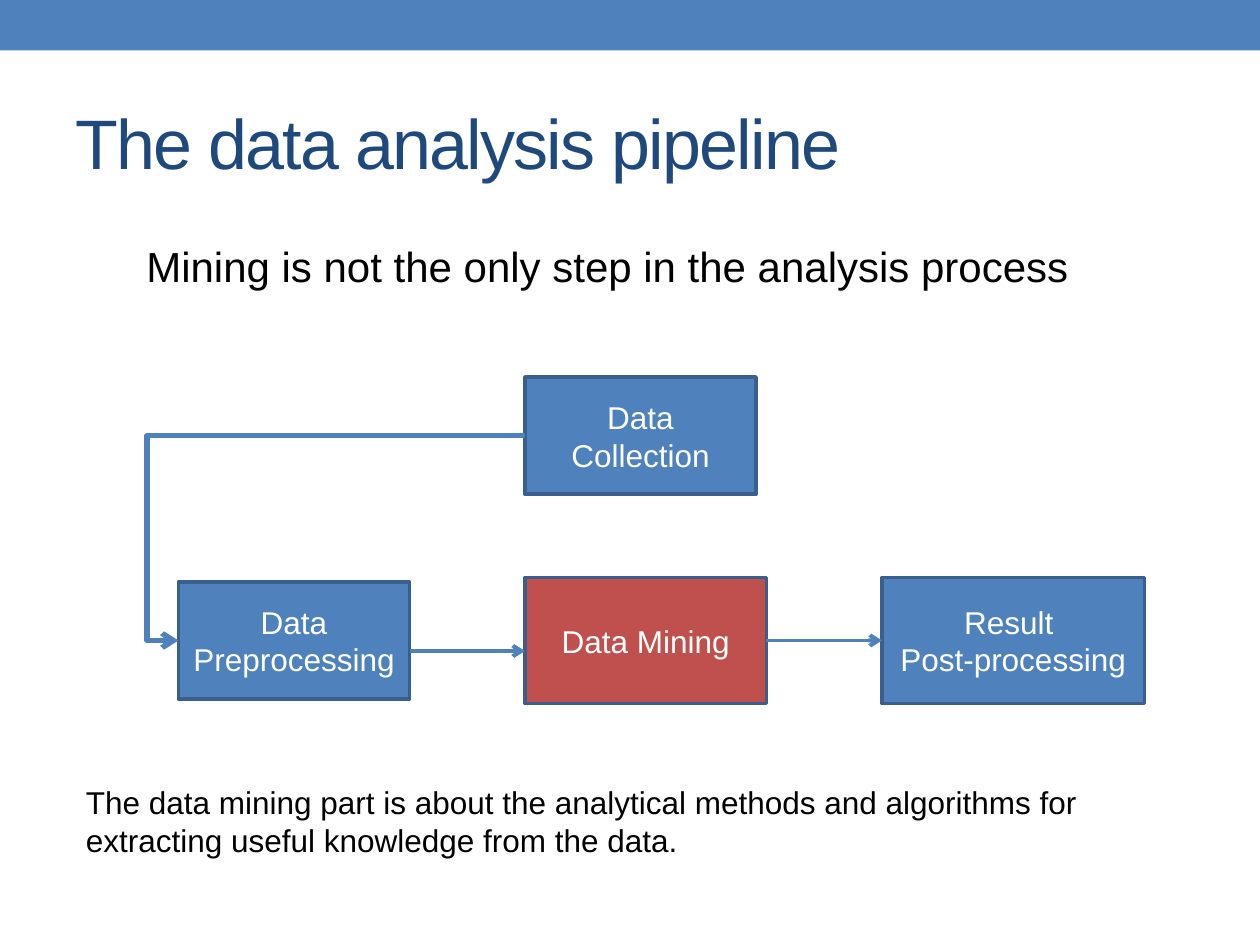
from dataclasses import dataclass

from lxml import etree
from pptx import Presentation
from pptx.dml.color import RGBColor
from pptx.enum.shapes import MSO_CONNECTOR, MSO_SHAPE
from pptx.enum.text import MSO_ANCHOR, PP_ALIGN
from pptx.oxml.ns import qn
from pptx.shapes.autoshape import Shape
from pptx.shapes.connector import Connector
from pptx.slide import Slide
from pptx.util import Pt

RECTANGLE = MSO_SHAPE.RECTANGLE
STRAIGHT = MSO_CONNECTOR.STRAIGHT
ELBOW = MSO_CONNECTOR.ELBOW
MIDDLE = MSO_ANCHOR.MIDDLE
TOP = MSO_ANCHOR.TOP
CENTER = PP_ALIGN.CENTER
LEFT = PP_ALIGN.LEFT

BLUE = RGBColor(0x4F, 0x81, 0xBD)
DARK_BLUE = RGBColor(0x3A, 0x5F, 0x8C)
NAVY = RGBColor(0x1F, 0x49, 0x7D)
RED = RGBColor(0xC0, 0x50, 0x4D)
WHITE = RGBColor(0xFF, 0xFF, 0xFF)
BLACK = RGBColor(0x00, 0x00, 0x00)
FONT = "Arial"
LEFT_SIDE, RIGHT_SIDE = 1, 3


@dataclass(frozen=True)
class Box:
    left: float
    top: float
    width: float
    height: float


@dataclass(frozen=True)
class Step:
    text: str
    box: Box
    fill: RGBColor = BLUE


@dataclass(frozen=True)
class Label:
    text: str
    box: Box
    size: float
    color: RGBColor = BLACK
    anchor: MSO_ANCHOR = TOP
    spacing: float = 0


COLLECTION = Step("Data Collection", Box(300, 215.5, 132, 67))
PREPROCESSING = Step("Data Preprocessing", Box(102, 332.5, 132, 67))
MINING = Step("Data Mining", Box(300, 330, 138, 72), RED)
POSTPROCESSING = Step("Result \nPost-processing", Box(504, 330, 150, 72))

LABELS = (
    Label("The data analysis pipeline", Box(36, 42, 648, 78), 40, NAVY, MIDDLE, -1),
    Label("Mining is not the only step in the analysis process",
          Box(76.5, 134, 572, 65), 24),
    Label("The data mining part is about the analytical methods and algorithms "
          "for extracting useful knowledge from the data.",
          Box(42, 444, 660, 51), 18),
)


def set_text(shape: Shape, text: str, size: float, color: RGBColor,
             alignment: PP_ALIGN, anchor: MSO_ANCHOR, spacing: float = 0) -> None:
    text_frame = shape.text_frame
    text_frame.text = text
    text_frame.word_wrap = True
    text_frame.vertical_anchor = anchor
    for paragraph in text_frame.paragraphs:
        paragraph.alignment = alignment
        for run in paragraph.runs:
            run.font.name = FONT
            run.font.size = Pt(size)
            run.font.color.rgb = color
            if spacing:
                run.font._element.set("spc", str(int(spacing * 100)))


def add_rectangle(slide: Slide, box: Box, fill: RGBColor) -> Shape:
    shape = slide.shapes.add_shape(
        RECTANGLE, Pt(box.left), Pt(box.top), Pt(box.width), Pt(box.height))
    shape.shadow.inherit = False
    shape.fill.solid()
    shape.fill.fore_color.rgb = fill
    shape.line.fill.background()
    return shape


def add_step(slide: Slide, step: Step) -> Shape:
    shape = add_rectangle(slide, step.box, step.fill)
    shape.line.color.rgb = DARK_BLUE
    shape.line.width = Pt(2.08)
    set_text(shape, step.text, 18, WHITE, CENTER, MIDDLE)
    return shape


def add_label(slide: Slide, label: Label) -> None:
    box = label.box
    shape = slide.shapes.add_textbox(
        Pt(box.left), Pt(box.top), Pt(box.width), Pt(box.height))
    set_text(shape, label.text, label.size, label.color, LEFT, label.anchor,
             label.spacing)


def add_arrow(slide: Slide, kind: MSO_CONNECTOR, width: float,
              start: tuple[float, float] = (0, 0),
              end: tuple[float, float] = (0, 0)) -> Connector:
    connector = slide.shapes.add_connector(
        kind, Pt(start[0]), Pt(start[1]), Pt(end[0]), Pt(end[1]))
    connector.line.color.rgb = BLUE
    connector.line.width = Pt(width)
    etree.SubElement(connector.line._get_or_add_ln(), qn("a:tailEnd"), type="arrow")
    etree.SubElement(connector._element.spPr, qn("a:effectLst"))
    return connector


def bend_at(connector: Connector, fraction: float) -> None:
    adjustments = connector._element.spPr.find(qn("a:prstGeom")).find(qn("a:avLst"))
    etree.SubElement(adjustments, qn("a:gd"), name="adj1",
                     fmla=f"val {round(fraction * 100000)}")


def main() -> None:
    presentation = Presentation()
    presentation.slide_width = Pt(720)
    presentation.slide_height = Pt(540)
    slide = presentation.slides.add_slide(presentation.slide_layouts[6])

    add_rectangle(slide, Box(0, 0, 720, 28.8), BLUE)
    collection, preprocessing, mining, postprocessing = (
        add_step(slide, step)
        for step in (COLLECTION, PREPROCESSING, MINING, POSTPROCESSING))

    add_arrow(slide, STRAIGHT, 2.25, (234, 372), (300, 372))

    result_arrow = add_arrow(slide, STRAIGHT, 2.25)
    result_arrow.begin_connect(mining, RIGHT_SIDE)
    result_arrow.end_connect(postprocessing, LEFT_SIDE)

    collection_arrow = add_arrow(slide, ELBOW, 3, (300, 249), (102, 366))
    collection_arrow.begin_connect(collection, LEFT_SIDE)
    collection_arrow.end_connect(preprocessing, LEFT_SIDE)
    bend_at(collection_arrow, 1.091)

    for label in LABELS:
        add_label(slide, label)

    presentation.save("out.pptx")


if __name__ == "__main__":
    main()
